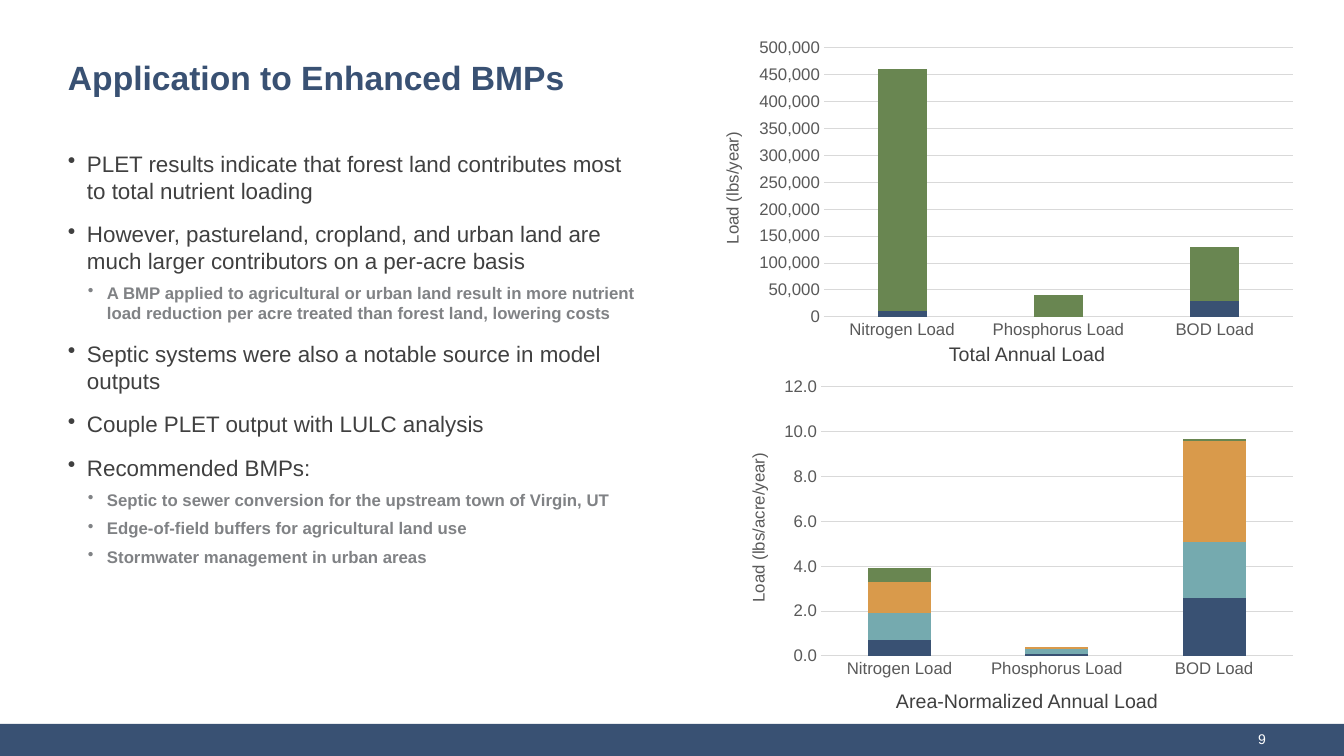
import pptx
import pptx.chart.data
import pptx.dml.color
import pptx.enum.chart
import pptx.enum.shapes
import pptx.enum.text
import pptx.oxml
import pptx.oxml.ns
import pptx.util

RGB = pptx.dml.color.RGBColor
NAVY = RGB(0x39, 0x51, 0x73)
TEAL = RGB(0x75, 0xAA, 0xAF)
ORANGE = RGB(0xD9, 0x9A, 0x4B)
GREEN = RGB(0x69, 0x86, 0x51)
DARK = RGB(0x40, 0x40, 0x40)
GREY = RGB(0x80, 0x82, 0x85)
AXIS = RGB(0x59, 0x59, 0x59)
GRID = RGB(0xD9, 0xD9, 0xD9)
WHITE = RGB(0xFF, 0xFF, 0xFF)
FONT = "Arial"
W, H = 1344, 756
SCALE = 12192000 / W  # EMU per px

BULLETS = [
    (0, "PLET results indicate that forest land contributes most to total nutrient loading"),
    (0, "However, pastureland, cropland, and urban land are much larger contributors "
        "on a per-acre basis"),
    (1, "A BMP applied to agricultural or urban land result in more nutrient load reduction "
        "per acre treated than forest land, lowering costs"),
    (0, "Septic systems were also a notable source in model outputs"),
    (0, "Couple PLET output with LULC analysis"),
    (0, "Recommended BMPs:"),
    (1, "Septic to sewer conversion for the upstream town of Virgin, UT"),
    (1, "Edge-of-field buffers for agricultural land use"),
    (1, "Stormwater management in urban areas"),
]
CATEGORIES = ["Nitrogen Load", "Phosphorus Load", "BOD Load"]
COLORS = [NAVY, TEAL, ORANGE, GREEN]
TOTAL = [(10000, 0, 30000), (0, 0, 0), (0, 0, 0), (450000, 40000, 100000)]
PER_ACRE = [(0.7, 0.1, 2.6), (1.2, 0.2, 2.5), (1.4, 0.1, 4.5), (0.6, 0, 0.1)]


def px(n):
    return pptx.util.Emu(round(n * SCALE))


def place(box):
    return [px(n) for n in box]


def style(font, size, color, bold=False):
    font.name, font.size, font.bold = FONT, pptx.util.Pt(size), bold
    font.color.rgb = color


def set_frame(tf, side=0, anchor=pptx.enum.text.MSO_ANCHOR.TOP, wrap=True):
    tf.margin_left = tf.margin_right = px(side)
    tf.margin_top = tf.margin_bottom = px(5)
    tf.vertical_anchor = anchor
    tf.word_wrap = wrap
    tf.auto_size = pptx.enum.text.MSO_AUTO_SIZE.NONE


def add_title(s, box, text):
    sp = s.shapes.title
    sp.left, sp.top, sp.width, sp.height = place(box)
    tf = sp.text_frame
    set_frame(tf, anchor=pptx.enum.text.MSO_ANCHOR.MIDDLE)
    tf.text = text
    p = tf.paragraphs[0]
    p.alignment = pptx.enum.text.PP_ALIGN.LEFT
    style(p.runs[0].font, 24, NAVY, True)


def add_bullets(s, box, items):
    tf = s.shapes.add_textbox(*place(box)).text_frame
    set_frame(tf)
    for i, (level, text) in enumerate(items):
        p = tf.paragraphs[0] if i == 0 else tf.add_paragraph()
        p.text = text
        p.level = level
        p.space_before = pptx.util.Pt(6 if i and level == 0 else 0)
        p.space_after = pptx.util.Pt(6)
        pPr = p._p.get_or_add_pPr()
        pPr.set("marL", str(px(20 * level + 19)))
        pPr.set("indent", str(px(-19)))
        bullet = pptx.oxml.parse_xml(
            f'<a:buChar {pptx.oxml.ns.nsdecls("a")} char="•"/>')
        pPr.append(bullet)
        style(p.runs[0].font, 12 if level else 16, GREY if level else DARK, bool(level))


def add_label(s, box, text, size, color, **frame):
    tf = s.shapes.add_textbox(*place(box)).text_frame
    set_frame(tf, **frame)
    tf.text = text
    style(tf.paragraphs[0].runs[0].font, size, color)
    return tf.paragraphs[0]


def set_layout(parent, index, inner=False, **fractions):
    """Fix the position of a chart part as fractions of the chart."""
    for old in parent.findall(pptx.oxml.ns.qn("c:layout")):
        parent.remove(old)
    target = '<c:layoutTarget val="inner"/>' if inner else ""
    modes = '<c:xMode val="edge"/><c:yMode val="edge"/>'
    values = "".join(f'<c:{k} val="{v:.4f}"/>' for k, v in fractions.items())
    parent.insert(index, pptx.oxml.parse_xml(
        f'<c:layout {pptx.oxml.ns.nsdecls("c")}><c:manualLayout>{target}{modes}{values}'
        '</c:manualLayout></c:layout>'))


def add_load_chart(s, box, plot, unit, unit_at, values, top, step, fmt, gap):
    """Stacked columns; plot and unit_at are offsets inside the box."""
    w, h = box[2:]
    data = pptx.chart.data.CategoryChartData()
    data.categories = CATEGORIES
    for n, row in enumerate(values, 1):
        data.add_series(f"Series {n}", row)
    chart = s.shapes.add_chart(
        pptx.enum.chart.XL_CHART_TYPE.COLUMN_STACKED, *place(box), data).chart
    chart.has_legend = chart.has_title = False
    style(chart.font, 12, AXIS)
    bars = chart.plots[0]
    bars.vary_by_categories = False
    bars.gap_width, bars.overlap = gap, 100
    for series, color in zip(bars.series, COLORS):
        series.format.fill.solid()
        series.format.fill.fore_color.rgb = color

    # Axes
    cat, val = chart.category_axis, chart.value_axis
    for axis in (cat, val):
        axis.major_tick_mark = axis.minor_tick_mark = pptx.enum.chart.XL_TICK_MARK.NONE
        style(axis.tick_labels.font, 12, AXIS)
    val.minimum_scale, val.maximum_scale, val.major_unit = 0, top, step
    val.tick_labels.number_format = fmt
    val.tick_labels.number_format_is_linked = False
    val.format.line.fill.background()
    val.has_major_gridlines = True
    for line in (cat.format.line, val.major_gridlines.format.line):
        line.color.rgb = GRID
        line.width = pptx.util.Pt(0.75)

    # Unit beside the value axis
    tf = val.axis_title.text_frame
    tf.text = unit
    style(tf.paragraphs[0].runs[0].font, 12, AXIS)
    tf._txBody.bodyPr.set("rot", "-5400000")
    tf._txBody.bodyPr.set("vert", "horz")
    set_layout(val.axis_title.element, 1, x=unit_at[0] / w, y=unit_at[1] / h)
    set_layout(chart.element.chart.plotArea, 0, True, x=plot[0] / w, y=plot[1] / h,
               w=plot[2] / w, h=plot[3] / h)


def add_footer(s, box, number):
    x, y, w, h = box
    sp = s.shapes.add_shape(pptx.enum.shapes.MSO_SHAPE.RECTANGLE, *place(box))
    sp.shadow.inherit = False
    sp.fill.solid()
    sp.fill.fore_color.rgb = NAVY
    sp.line.fill.background()
    p = add_label(s, (x + w - 353, y, 285, h - 3), number, 10, WHITE, side=10,
                  anchor=pptx.enum.text.MSO_ANCHOR.MIDDLE)
    p.alignment = pptx.enum.text.PP_ALIGN.RIGHT


def main():
    prs = pptx.Presentation()
    prs.slide_width, prs.slide_height = px(W), px(H)
    s = prs.slides.add_slide(prs.slide_layouts[5])
    add_footer(s, (0, 724, W, 32), "9")
    add_title(s, (68, 38, 592, 79), "Application to Enhanced BMPs")
    add_bullets(s, (68, 145, 575, 505), BULLETS)
    add_load_chart(s, (702, 32, 604, 312), (122, 16, 469, 269), "Load (lbs/year)",
                   (17, 97), TOTAL, 500000, 50000, "#,##0", 219)
    add_load_chart(s, (727, 371, 578, 312), (94, 16, 472, 269), "Load (lbs/acre/year)",
                   (18, 79), PER_ACRE, 12, 2, "#,##0.0", 150)
    add_label(s, (949, 337, 157, 34), "Total Annual Load", 14, DARK, wrap=False)
    add_label(s, (896, 684, 263, 34), "Area-Normalized Annual Load", 14, DARK, wrap=False)
    prs.save("out.pptx")


if __name__ == "__main__":
    main()
